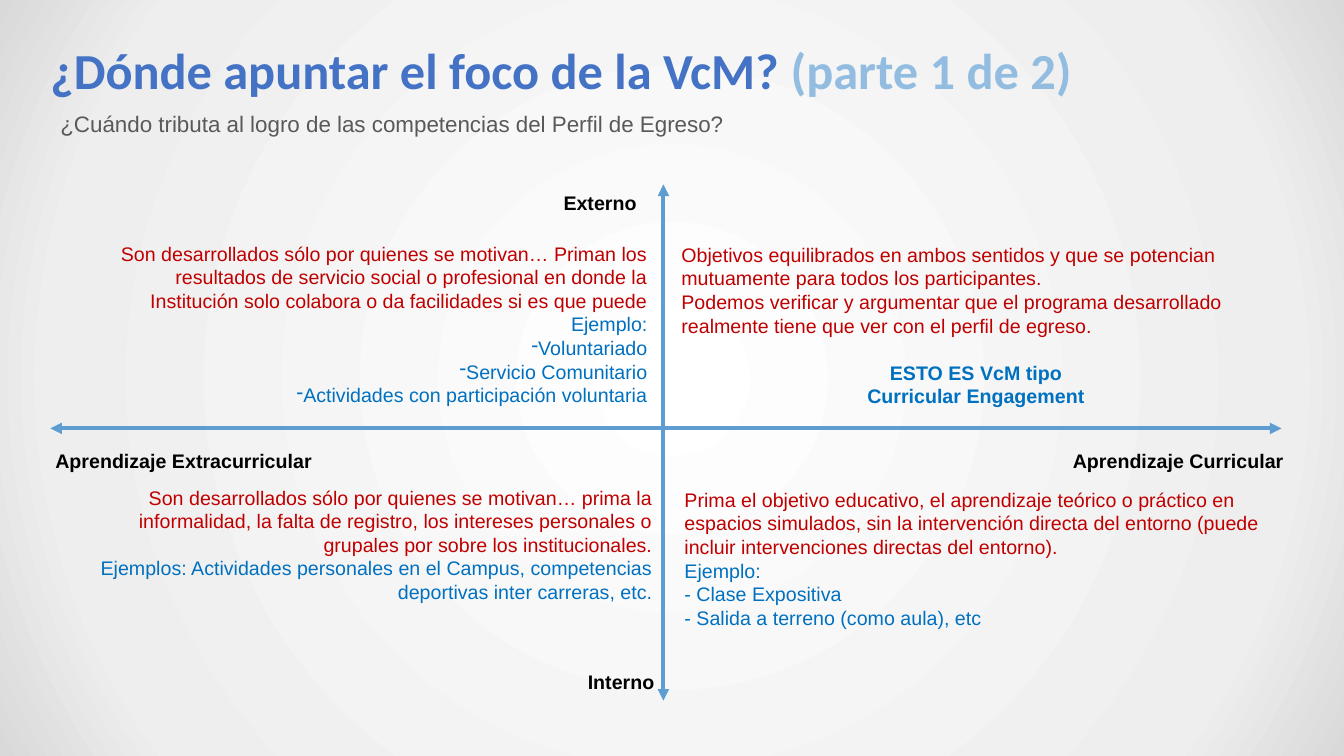
from pptx import Presentation
from pptx.dml.color import RGBColor
from pptx.enum.shapes import MSO_CONNECTOR as Connector
from pptx.enum.text import MSO_ANCHOR as Anchor, PP_ALIGN as Align
from pptx.oxml import parse_xml
from pptx.oxml.ns import nsdecls
from pptx.util import Inches, Pt

BLACK, GRAY, RED, BLUE = "000000", "595959", "C00000", "0070C0"
TITLE_BLUE, PALE_BLUE, AXIS_BLUE = "4472C4", "93BDE0", "5D9DD1"


def color(value):
    return RGBColor.from_string(value)


def line(*runs, align=Align.LEFT, before=0, bullet=None):
    """One paragraph: runs are strings or (string, colour) pairs."""
    return {"runs": runs, "align": align, "before": before, "bullet": bullet}


def write(frame, lines, size=14, font="Arial", bold=False):
    """Fill a text frame with paragraphs made by line()."""
    for index, item in enumerate(lines):
        paragraph = frame.paragraphs[0] if index == 0 else frame.add_paragraph()
        paragraph.alignment = item["align"]
        paragraph.space_before = Pt(item["before"])
        if item["bullet"]:
            properties = paragraph._p.get_or_add_pPr()
            properties.set("marL", "0")
            properties.set("indent", "0")
            properties.append(parse_xml(f'<a:buChar {nsdecls("a")} char="{item["bullet"]}"/>'))
        for text, shade, *strong in item["runs"]:
            run = paragraph.add_run()
            run.text = text
            run.font.size, run.font.name = Pt(size), font
            run.font.bold = bold or bool(strong)
            run.font.color.rgb = color(shade)


class QuadrantSlide:
    """Places elements by percentages of the slide's width and height."""

    def __init__(self, presentation):
        self.width, self.height = presentation.slide_width, presentation.slide_height
        self.slide = presentation.slides.add_slide(presentation.slide_layouts[6])

    def x(self, share):
        return round(self.width * share / 100)

    def y(self, share):
        return round(self.height * share / 100)

    def background(self, stops):
        marks = "".join(f'<a:gs pos="{position * 1000}"><a:srgbClr val="{shade}"/></a:gs>'
                        for position, shade in stops)
        self.slide._element.cSld.insert(0, parse_xml(
            f'<p:bg {nsdecls("p", "a")}><p:bgPr><a:gradFill rotWithShape="1">'
            f'<a:gsLst>{marks}</a:gsLst><a:path path="circle">'
            '<a:fillToRect l="50000" t="50000" r="50000" b="50000"/></a:path>'
            '</a:gradFill><a:effectLst/></p:bgPr></p:bg>'))

    def text(self, left, top, width, height, *lines, **style):
        shape = self.slide.shapes.add_textbox(
            self.x(left), self.y(top), self.x(width), self.y(height))
        shape.text_frame.word_wrap = True
        write(shape.text_frame, lines, **style)
        return shape.text_frame

    def axis(self, left, top, right, bottom):
        connector = self.slide.shapes.add_connector(
            Connector.STRAIGHT, self.x(left), self.y(top), self.x(right), self.y(bottom))
        connector.line.color.rgb = color(AXIS_BLUE)
        connector.line.width = Pt(2.75)
        outline = connector.line._get_or_add_ln()
        for end in ("headEnd", "tailEnd"):
            outline.append(parse_xml(f'<a:{end} {nsdecls("a")} type="triangle"/>'))
        connector._element.spPr.append(parse_xml(f'<a:effectLst {nsdecls("a")}/>'))


def main():
    presentation = Presentation()
    presentation.slide_width, presentation.slide_height = Inches(13.33), Inches(7.5)
    page = QuadrantSlide(presentation)
    page.background([(0, "FFFFFF"), (81, "EEEEEE"), (100, "D9D9D9")])

    # Heading
    title = page.text(3.75, 4, 86.27, 10.4,
                      line(("¿Dónde apuntar el foco de la VcM?", TITLE_BLUE),
                           (" (parte 1 de 2)", PALE_BLUE)),
                      size=36, font="Calibri", bold=True)
    title.margin_left = title.margin_right = 0
    title.vertical_anchor = Anchor.MIDDLE
    page.text(3.75, 13.87, 91.3, 11.73,
              line(("¿Cuándo tributa al logro de las competencias del Perfil de Egreso?", GRAY),
                   align=Align.JUSTIFY, before=3.2), size=16)

    # Upper quadrants
    page.text(5.78, 31.33, 43.14, 26.53,
              line(("Son desarrollados sólo por quienes se motivan… Priman los resultados de "
                    "servicio social o profesional en donde la Institución solo colabora o da "
                    "facilidades si es que puede", RED), align=Align.RIGHT),
              line(("Ejemplo:", BLUE), align=Align.RIGHT),
              *[line((example, BLUE), align=Align.RIGHT, bullet="-")
                for example in ("Voluntariado", "Servicio Comunitario",
                                "Actividades con participación voluntaria")])
    page.text(49.96, 31.47, 45.31, 23.33,
              line(("Objetivos equilibrados en ambos sentidos y que se potencian mutuamente "
                    "para todos los participantes.", RED)),
              line(("Podemos verificar y argumentar que el programa desarrollado realmente "
                    "tiene que ver con el perfil de egreso.", RED)),
              line(("ESTO ES VcM tipo", BLUE, True), align=Align.CENTER, before=16.8),
              line(("Curricular Engagement", BLUE, True), align=Align.CENTER))

    # Lower quadrants
    page.text(5.63, 63.6, 43.66, 17.07,
              line(("Son desarrollados sólo por quienes se motivan… prima la informalidad, la "
                    "falta de registro, los intereses personales o grupales por sobre los "
                    "institucionales.", RED), align=Align.RIGHT),
              line(("Ejemplos: Actividades personales en el Campus, competencias deportivas "
                    "inter carreras, etc.", BLUE), align=Align.RIGHT))
    page.text(50.19, 63.87, 45.09, 20.13,
              line(("Prima el objetivo educativo, el aprendizaje teórico o práctico en espacios "
                    "simulados, sin la intervención directa del entorno (puede incluir "
                    "intervenciones directas del entorno).", RED)),
              *[line((text, BLUE)) for text in ("Ejemplo:", "- Clase Expositiva",
                                                "- Salida a terreno (como aula), etc")])

    # Axis labels
    for left, top, width, label, align in (
            (41.19, 24.53, 8.25, "Externo", Align.LEFT),
            (38.33, 88, 11.1, "Interno", Align.RIGHT),
            (3.38, 58.67, 31.66, "Aprendizaje Extracurricular", Align.LEFT),
            (73.07, 58.67, 23.18, "Aprendizaje Curricular", Align.RIGHT)):
        page.text(left, top, width, 4.53, line((label, BLACK), align=align), bold=True)

    # Axes
    page.axis(3.75, 56.67, 95.35, 56.67)
    page.axis(49.36, 24.4, 49.36, 92.67)

    presentation.save("out.pptx")


if __name__ == "__main__":
    main()
